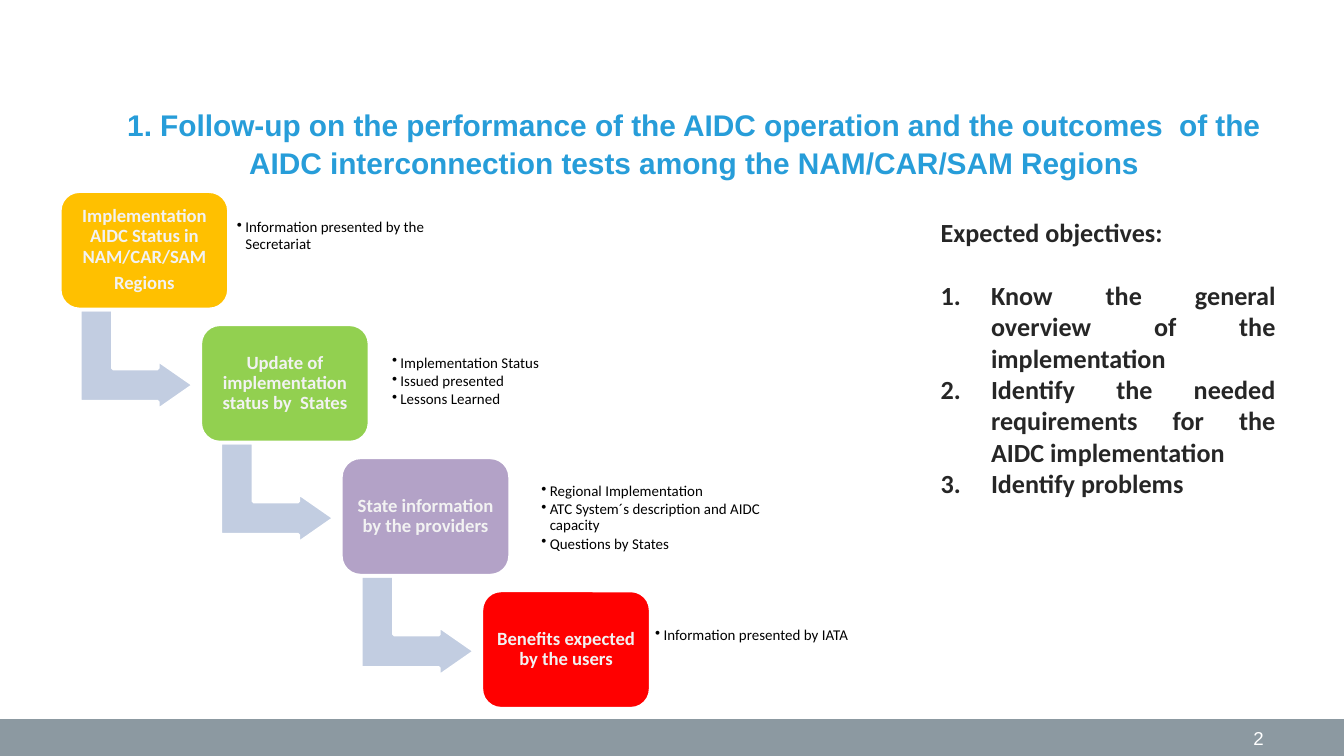
import pptx
import pptx.dml.color
import pptx.enum.shapes
import pptx.enum.text
import pptx.oxml.xmlchemy
import pptx.util
from lxml import etree

Pt = pptx.util.Pt
ALIGN = pptx.enum.text.PP_ALIGN
ANCHOR = pptx.enum.text.MSO_ANCHOR
SHAPE = pptx.enum.shapes.MSO_SHAPE
DRAWING = "{http://schemas.openxmlformats.org/drawingml/2006/main}"

TITLE = (
    "1. Follow-up on the performance of the AIDC operation and the outcomes  of the "
    "AIDC interconnection tests among the NAM/CAR/SAM Regions"
)
STEPS = [
    ("FFC000", ["Implementation AIDC Status in NAM/CAR/SAM", "Regions"]),
    ("92D050", ["Update of implementation status by  States"]),
    ("B3A2C7", ["State information by the providers"]),
    ("FF0000", ["Benefits expected by the users"]),
]
DETAILS = [
    ((124, 108, 130, 37), ["Information presented by the Secretariat"]),
    ((207, 179, 214, 51), ["Implementation Status", "Issued presented", "Lessons Learned"]),
    ((287, 252, 143, 51), [
        "Regional Implementation",
        "ATC System´s description and AIDC capacity",
        "Questions by States",
    ]),
    ((348, 317, 130, 47), ["Information presented by IATA"]),
]
OBJECTIVES = [
    "Know the general overview of the implementation",
    "Identify the needed requirements for the AIDC implementation",
    "Identify problems",
]

TITLE_FONT = {"name": "Arial", "size": Pt(16), "bold": True}
NUMBER_FONT = {"name": "Arial", "size": Pt(10)}
STEP_FONT = {"name": "Calibri", "size": Pt(10), "bold": True}
DETAIL_FONT = {"name": "Calibri", "size": Pt(8)}
OBJECTIVE_FONT = {"name": "Calibri", "size": Pt(14), "bold": True}
STEP_PARA = {"alignment": ALIGN.CENTER, "line_spacing": 0.9, "space_after": Pt(3.5)}
DETAIL_PARA = {"level": 1, "line_spacing": 0.9, "space_after": Pt(1.2)}


def rgb(value):
    return pptx.dml.color.RGBColor.from_string(value)


def set_all(target, values):
    for name, value in values.items():
        setattr(target, name, value)


def set_frame(frame, anchor, inset=None):
    set_all(frame, {"word_wrap": True, "vertical_anchor": anchor,
                    "auto_size": pptx.enum.text.MSO_AUTO_SIZE.NONE})
    if inset is not None:
        sides = ("margin_left", "margin_right", "margin_top", "margin_bottom")
        set_all(frame, dict.fromkeys(sides, Pt(inset)))


def write(frame, lines, font, color, para_format):
    for index, line in enumerate(lines):
        para = frame.paragraphs[0] if index == 0 else frame.add_paragraph()
        span = para.add_run()
        span.text = line
        set_all(para, para_format)
        set_all(span.font, font)
        span.font.color.rgb = rgb(color)


def set_bullet(para, indent, tag, values):
    properties = para._p.get_or_add_pPr()
    properties.set("marL", str(Pt(indent)))
    properties.set("indent", str(-Pt(indent)))
    etree.SubElement(properties, DRAWING + tag, values)


def add_text(page, area):
    return page.shapes.add_textbox(*map(Pt, area)).text_frame


def add_block(page, kind, area, color):
    block = page.shapes.add_shape(kind, *map(Pt, area))
    block.shadow.inherit = False
    block.fill.solid()
    block.fill.fore_color.rgb = rgb(color)
    block.line.color.rgb = rgb("FFFFFF")
    block.line.width = Pt(2)
    return block


def add_title(page, area):
    title = page.shapes.title
    set_all(title, dict(zip(("left", "top", "width", "height"), map(Pt, area))))
    set_frame(title.text_frame, ANCHOR.TOP)
    write(title.text_frame, [TITLE], TITLE_FONT, "279DD9",
          {"alignment": ALIGN.CENTER, "line_spacing": 1.05})


def add_footer(page, area):
    left, top, width, height = area
    bar = add_block(page, SHAPE.RECTANGLE, area, "8C99A1")
    bar.line.fill.background()
    frame = add_text(page, (left + width - 204, top, 168, height))
    set_frame(frame, ANCHOR.MIDDLE)
    write(frame, ["2"], NUMBER_FONT, "FFFFFF", {"alignment": ALIGN.RIGHT})


def add_staircase(page, area):
    left, top, width, height = area
    step_width, step_height = 90.7, 63.4
    count = len(STEPS)
    across = (width - step_width) / (count - 1)
    down = (height - step_height) / (count - 1)
    for index, (color, lines) in enumerate(STEPS):
        x, y = left + index * across, top + index * down
        if index < count - 1:
            arrow = add_block(page, SHAPE.BENT_UP_ARROW, (x + 14.3, y + 59.8, 54, 61.2), "C2CDE1")
            arrow.rotation = 90
            for place, value in enumerate((0.33, 0.25, 0.36)):
                arrow.adjustments[place] = value
        step = add_block(page, SHAPE.ROUNDED_RECTANGLE, (x, y, step_width, step_height), color)
        set_frame(step.text_frame, ANCHOR.MIDDLE, 3)
        write(step.text_frame, lines, STEP_FONT, "F2F2F2", STEP_PARA)


def add_detail(page, area, lines):
    frame = add_text(page, area)
    set_frame(frame, ANCHOR.MIDDLE, 3)
    write(frame, lines, DETAIL_FONT, "000000", DETAIL_PARA)
    for para in frame.paragraphs:
        set_bullet(para, 4.5, "buChar", {"char": "•"})


def add_objectives(page, area):
    frame = add_text(page, area)
    set_frame(frame, ANCHOR.TOP)
    write(frame, ["Expected objectives:"] + OBJECTIVES, OBJECTIVE_FONT, "262626",
          {"alignment": ALIGN.JUSTIFY})
    for para in frame.paragraphs[1:]:
        set_bullet(para, 27, "buAutoNum", {"type": "arabicPeriod"})
    frame.paragraphs[1].space_before = Pt(17)


def main():
    deck = pptx.Presentation()
    deck.slide_width, deck.slide_height = Pt(720), Pt(405)
    page = deck.slides.add_slide(deck.slide_layouts[5])
    add_footer(page, (0, 385.3, 720, 19.7))
    add_title(page, (48, 52.6, 648, 67.7))
    add_staircase(page, (32, 102.4, 316.6, 277.3))
    for area, lines in DETAILS:
        add_detail(page, area, lines)
    add_objectives(page, (496.8, 112.3, 193.7, 227.5))
    deck.save("out.pptx")


if __name__ == "__main__":
    main()
